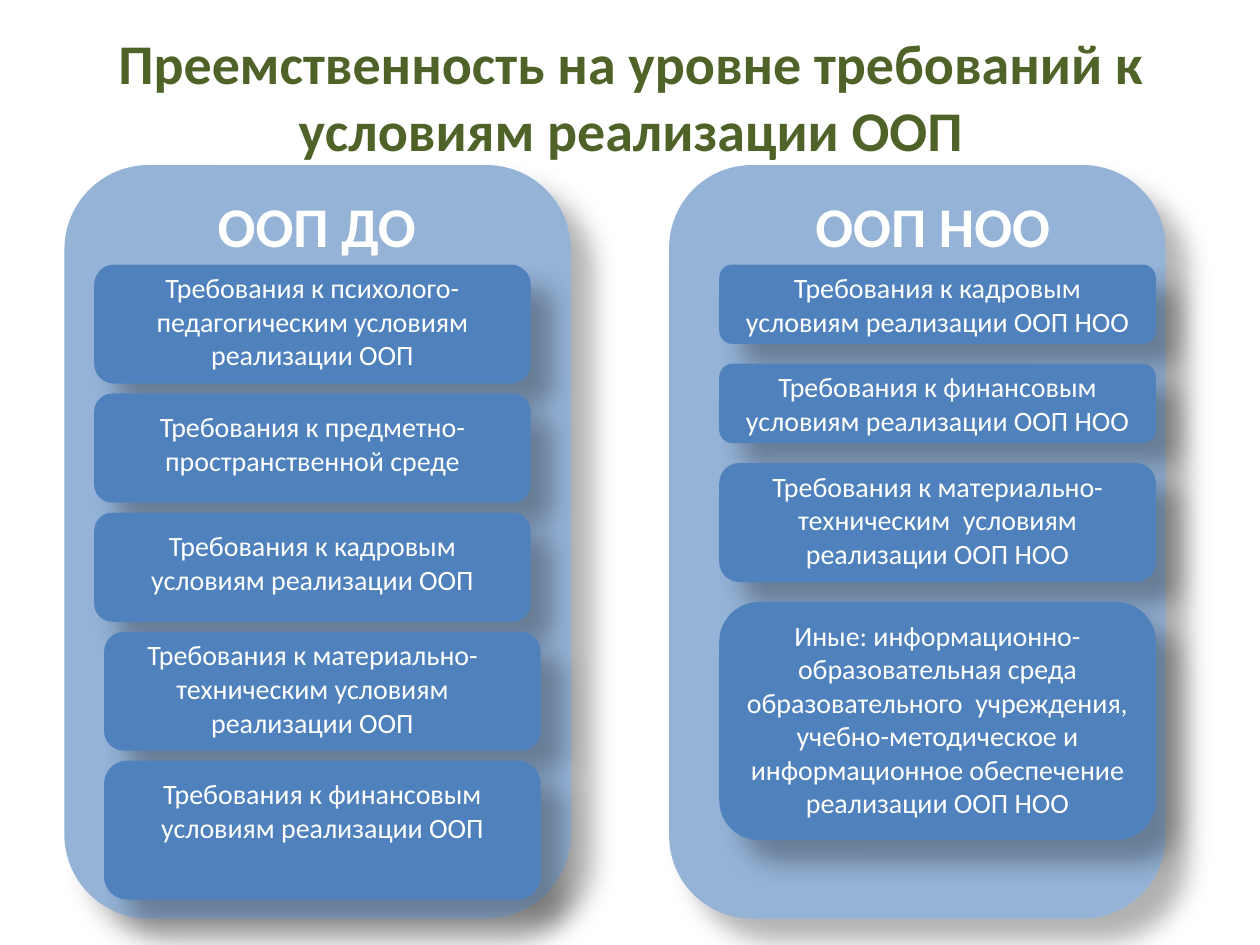
from dataclasses import dataclass

from lxml.etree import SubElement
from pptx import Presentation
from pptx.dml.color import RGBColor
from pptx.enum.shapes import MSO_SHAPE as Shape
from pptx.enum.text import MSO_ANCHOR as Anchor, PP_ALIGN as Align
from pptx.oxml.ns import qn
from pptx.util import Pt


@dataclass(frozen=True)
class Theme:
    font: str = "Calibri"
    title: str = "4F6228"
    panel: str = "95B3D7"
    card: str = "4F81BD"
    light: str = "FFFFFF"
    shadow: str = "000000"
    heading_size: int = 32
    body_size: int = 16


@dataclass(frozen=True)
class Card:
    text: str
    rows: int            # height in grid steps
    shift: int = 0       # steps to the right
    text_right: int = 1  # steps from the card's left edge to its text
    text_down: int = 0   # steps from the card's top edge to its text
    lines: int = 2


@dataclass(frozen=True)
class Column:
    heading: str
    heading_left: float
    left: float
    width: float
    card_left: float
    gap: int             # steps between cards
    cards: tuple[Card, ...]


THEME = Theme()
STEP = 5.67              # 2 mm grid
PANEL_TOP, PANEL_HEIGHT = 94.3, 430.6
HEADING_TOP, HEADING_WIDTH = 105.8, 221
CARD_TOP, CARD_WIDTH = 151.2, 44 * STEP
TEXT_WIDTH = 42 * STEP

COLUMNS = (
    Column("ООП ДО", 70.6, 36.8, 289.4, 53.8, 1, (
        Card("Требования к психолого-педагогическим условиям реализации ООП", 12, lines=3),
        Card("Требования к предметно-пространственной среде", 11, text_down=1),
        Card("Требования к кадровым условиям реализации ООП", 11, text_down=1),
        Card("Требования к материально-техническим условиям реализации ООП", 12,
             shift=1, text_right=0, lines=3),
        Card("Требования к финансовым условиям реализации ООП", 14, shift=1, text_down=1),
    )),
    Column("ООП НОО", 422.6, 382.4, 283.7, 411, 2, (
        Card("Требования к кадровым условиям реализации ООП НОО", 8),
        Card("Требования к финансовым условиям реализации ООП НОО", 8),
        Card("Требования к материально-техническим  условиям реализации ООП НОО", 12, lines=3),
        Card("Иные: информационно-образовательная среда образовательного  учреждения, "
             "учебно-методическое и информационное обеспечение реализации ООП НОО", 24,
             text_down=1, lines=6),
    )),
)


def add_text(page, text: str, left: float, top: float, width: float, height: float, *,
             size: int = THEME.body_size, color: str = THEME.light,
             bold: bool = False, anchor=Anchor.TOP) -> None:
    box = page.shapes.add_textbox(Pt(left), Pt(top), Pt(width), Pt(height))
    frame = box.text_frame
    frame.word_wrap = True
    frame.vertical_anchor = anchor
    para = frame.paragraphs[0]
    para.alignment = Align.CENTER
    span = para.add_run()
    span.text = text
    span.font.name = THEME.font
    span.font.size = Pt(size)
    span.font.bold = bold
    span.font.color.rgb = RGBColor.from_string(color)


def add_shadow(shape) -> None:
    """Soft shadow falling to the lower right."""
    shape.shadow.inherit = False
    effects = shape._element.spPr.find(qn("a:effectLst"))
    outer = SubElement(effects, qn("a:outerShdw"), blurRad=str(Pt(15)), dist=str(Pt(18)),
                       dir=str(45 * 60000), sy="90000", algn="bl", rotWithShape="0")
    tint = SubElement(outer, qn("a:srgbClr"), val=THEME.shadow)
    SubElement(tint, qn("a:alpha"), val="30000")


def add_block(page, left: float, top: float, width: float, height: float, color: str) -> None:
    block = page.shapes.add_shape(Shape.ROUNDED_RECTANGLE, Pt(left), Pt(top),
                                  Pt(width), Pt(height))
    block.fill.solid()
    block.fill.fore_color.rgb = RGBColor.from_string(color)
    block.line.fill.background()
    add_shadow(block)


def draw_column(page, column: Column) -> None:
    # Panel and heading
    add_block(page, column.left, PANEL_TOP, column.width, PANEL_HEIGHT, THEME.panel)
    add_text(page, column.heading, column.heading_left, HEADING_TOP, HEADING_WIDTH, 46,
             size=THEME.heading_size, bold=True)
    # Stacked cards
    top = CARD_TOP
    for card in column.cards:
        left = column.card_left + card.shift * STEP
        add_block(page, left, top, CARD_WIDTH, card.rows * STEP, THEME.card)
        add_text(page, card.text, left + card.text_right * STEP, top + card.text_down * STEP,
                 TEXT_WIDTH, 7.2 + 19.4 * card.lines)
        top += (card.rows + column.gap) * STEP


def main() -> None:
    deck = Presentation()
    deck.slide_width, deck.slide_height = Pt(720), Pt(540)
    page = deck.slides.add_slide(deck.slide_layouts[6])

    # Title
    add_text(page, "Преемственность на уровне требований к условиям реализации ООП",
             36.7, 9.4, 648, 90, size=THEME.heading_size, color=THEME.title,
             bold=True, anchor=Anchor.MIDDLE)

    # Columns
    for column in COLUMNS:
        draw_column(page, column)

    deck.save("out.pptx")


if __name__ == "__main__":
    main()
